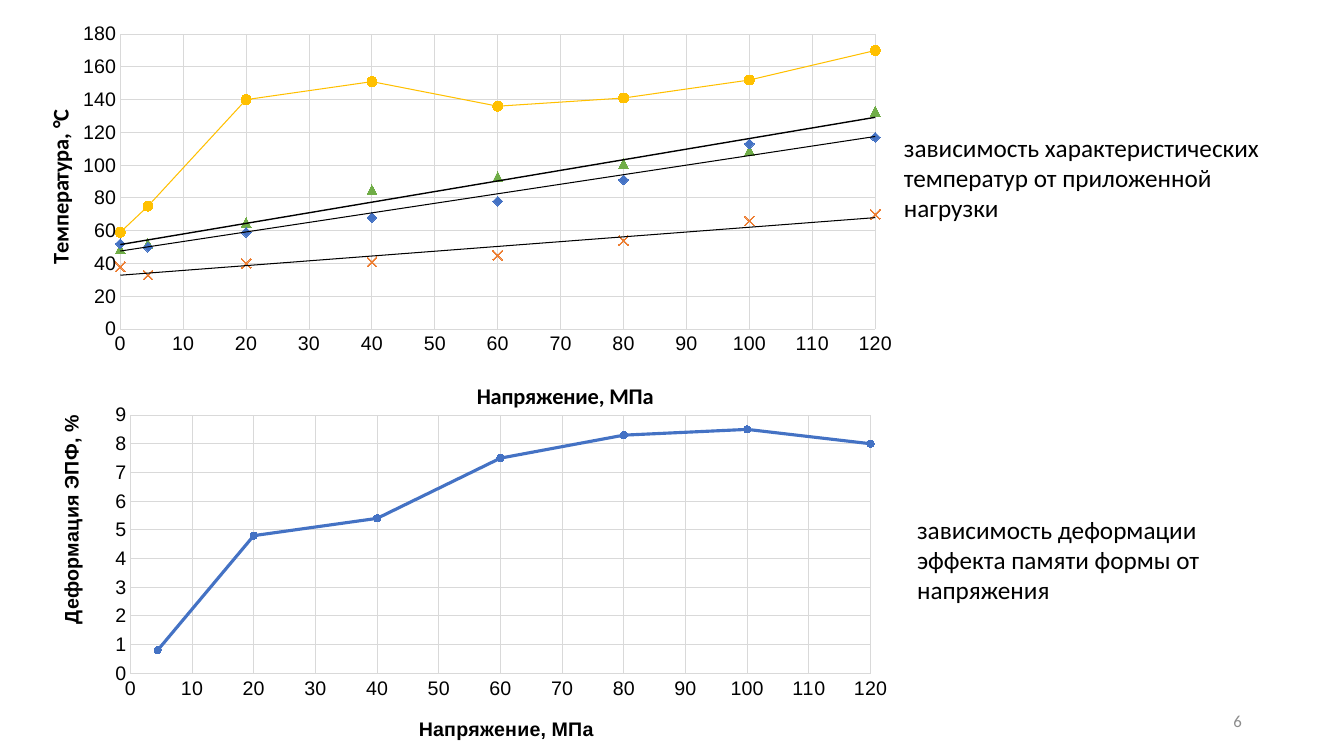
from lxml import etree
from pptx import Presentation
from pptx.chart.data import XyChartData
from pptx.dml.color import RGBColor
from pptx.enum.chart import XL_CHART_TYPE, XL_MARKER_STYLE, XL_TICK_MARK
from pptx.enum.text import MSO_ANCHOR, PP_ALIGN
from pptx.oxml import parse_xml
from pptx.util import Pt

BLACK = RGBColor(0x00, 0x00, 0x00)
GRAY = RGBColor(0x8C, 0x8C, 0x8C)
GRID = RGBColor(0xD9, 0xD9, 0xD9)
BLUE = RGBColor(0x44, 0x72, 0xC4)
ORANGE = RGBColor(0xED, 0x7D, 0x31)
GREEN = RGBColor(0x70, 0xAD, 0x47)
YELLOW = RGBColor(0xFF, 0xC0, 0x00)
C = "http://schemas.openxmlformats.org/drawingml/2006/chart"
A = "http://schemas.openxmlformats.org/drawingml/2006/main"


def place(parent, index, x, y, size=None):
    for old in parent.findall(f"{{{C}}}layout"):
        parent.remove(old)
    layout = etree.Element(f"{{{C}}}layout")
    manual = etree.SubElement(layout, f"{{{C}}}manualLayout")
    settings = [("xMode", "edge"), ("yMode", "edge"), ("x", x), ("y", y)]
    if size:
        settings = [("layoutTarget", "inner")] + settings + list(zip("wh", size))
    for tag, value in settings:
        etree.SubElement(manual, f"{{{C}}}{tag}").set("val", str(value))
    parent.insert(index, parse_xml(etree.tostring(layout)))


def write(text_frame, text, size, color, font, bold=False):
    run = text_frame.paragraphs[0].add_run()
    run.text = text
    run.font.size = Pt(size)
    run.font.bold = bold
    run.font.name = font
    run.font.color.rgb = color


STRESS = [0, 4.4, 20, 40, 60, 80, 100, 120]
MARK = XL_MARKER_STYLE
# name, stresses, values, color, marker, marker size, line width, trend width
temperatures = [
    ("Мн", STRESS, [52, 50, 59, 68, 78, 91, 113, 117], BLUE, MARK.DIAMOND, 7, 0, 0.75),
    ("Мк", STRESS, [38, 33, 40, 41, 45, 54, 66, 70], ORANGE, MARK.X, 7, 0, 0.75),
    ("Ан", STRESS, [49, 52, 65, 85, 93, 101, 109, 133], GREEN, MARK.TRIANGLE, 7, 0, 1),
    ("Ак", STRESS, [59, 75, 140, 151, 136, 141, 152, 170], YELLOW, MARK.CIRCLE, 7, 0.75, 0),
]
strains = [
    ("Деформация ЭПФ", STRESS[1:], [0.8, 4.8, 5.4, 7.5, 8.3, 8.5, 8],
     BLUE, MARK.CIRCLE, 5, 2.25, 0),
]
charts = [
    dict(kind=XL_CHART_TYPE.XY_SCATTER, box=(23, 10.8, 629.3, 290.2), curves=temperatures,
         top=180, step=20, plot=(0.1, 0.047, 0.857, 0.726), title_font="Calibri",
         title_size=16, value_title="Температура, °С ",
         stress_at=(0.5, 0.89), value_at=(0.01, 0.21)),
    dict(kind=XL_CHART_TYPE.XY_SCATTER_LINES, box=(33.1, 283.7, 612.7, 256.3), curves=strains,
         top=9, step=1, plot=(0.098, 0.05, 0.863, 0.72), title_font="Arial",
         title_size=14, value_title="Деформация ЭПФ, %",
         stress_at=(0.43, 0.88), value_at=(0.01, 0.04)),
]

presentation = Presentation()
presentation.slide_width = Pt(960)
presentation.slide_height = Pt(540)
slide = presentation.slides.add_slide(presentation.slide_layouts[6])

for setup in charts:
    data = XyChartData()
    for name, stresses, values, *_ in setup["curves"]:
        points = data.add_series(name)
        for stress, value in zip(stresses, values):
            points.add_data_point(stress, value)
    box = [Pt(length) for length in setup["box"]]
    chart = slide.shapes.add_chart(setup["kind"], *box, data).chart
    chart.has_legend = False
    chart.has_title = False
    chart.font.name = "Arial"
    chart.font.size = Pt(14)
    chart.font.color.rgb = BLACK
    plot = chart.plots[0]
    plot.vary_by_categories = False
    place(plot.series[0]._element.getparent().getparent(), 0, *setup["plot"][:2],
          setup["plot"][2:])

    for curve, (_, _, _, color, marker, marker_size, width, trend) in zip(
            plot.series, setup["curves"]):
        curve.smooth = False
        curve.marker.style = marker
        curve.marker.size = marker_size
        if marker == MARK.X:
            curve.marker.format.fill.background()
        else:
            curve.marker.format.fill.solid()
            curve.marker.format.fill.fore_color.rgb = color
        curve.marker.format.line.color.rgb = color
        curve.marker.format.line.width = Pt(0.75)
        if width:
            curve.format.line.color.rgb = color
            curve.format.line.width = Pt(width)
        else:
            curve.format.line.fill.background()
        if trend:
            curve._element.find(f"{{{C}}}xVal").addprevious(parse_xml(
                f'<c:trendline xmlns:c="{C}" xmlns:a="{A}"><c:spPr><a:ln w="{Pt(trend)}">'
                f'<a:solidFill><a:srgbClr val="{BLACK}"/></a:solidFill></a:ln></c:spPr>'
                '<c:trendlineType val="linear"/><c:dispRSqr val="0"/><c:dispEq val="0"/>'
                '</c:trendline>'))

    for axis, title, at, top, step in (
            (chart.category_axis, "Напряжение, МПа", setup["stress_at"], 120, 10),
            (chart.value_axis, setup["value_title"], setup["value_at"],
             setup["top"], setup["step"])):
        axis.minimum_scale = 0
        axis.maximum_scale = top
        axis.major_unit = step
        axis.major_tick_mark = XL_TICK_MARK.NONE
        axis.minor_tick_mark = XL_TICK_MARK.NONE
        axis.tick_labels.number_format = "General"
        axis.tick_labels.number_format_is_linked = False
        axis.has_major_gridlines = True
        axis.major_gridlines.format.line.color.rgb = GRID
        axis.major_gridlines.format.line.width = Pt(0.75)
        write(axis.axis_title.text_frame, title, setup["title_size"], BLACK,
              setup["title_font"], bold=True)
        place(axis.axis_title._element, 1, *at)
    chart.category_axis.format.line.color.rgb = GRID
    chart.category_axis.format.line.width = Pt(0.75)
    chart.value_axis.format.line.fill.background()

captions = [
    ("зависимость характеристических температур от приложенной нагрузки",
     638.6, 90.7, 298.8),
    ("зависимость деформации эффекта памяти формы от напряжения",
     648, 363.6, 268.6),
]
for text, left, top, width in captions:
    caption = slide.shapes.add_textbox(Pt(left), Pt(top), Pt(width), Pt(72.7)).text_frame
    caption.word_wrap = True
    write(caption, text, 18, BLACK, "Calibri")

page_number = slide.shapes.add_textbox(Pt(678.2), Pt(500.4), Pt(216), Pt(28.8)).text_frame
page_number.word_wrap = True
page_number.vertical_anchor = MSO_ANCHOR.MIDDLE
page_number.paragraphs[0].alignment = PP_ALIGN.RIGHT
write(page_number, "6", 12, GRAY, "Calibri")

presentation.save("out.pptx")
